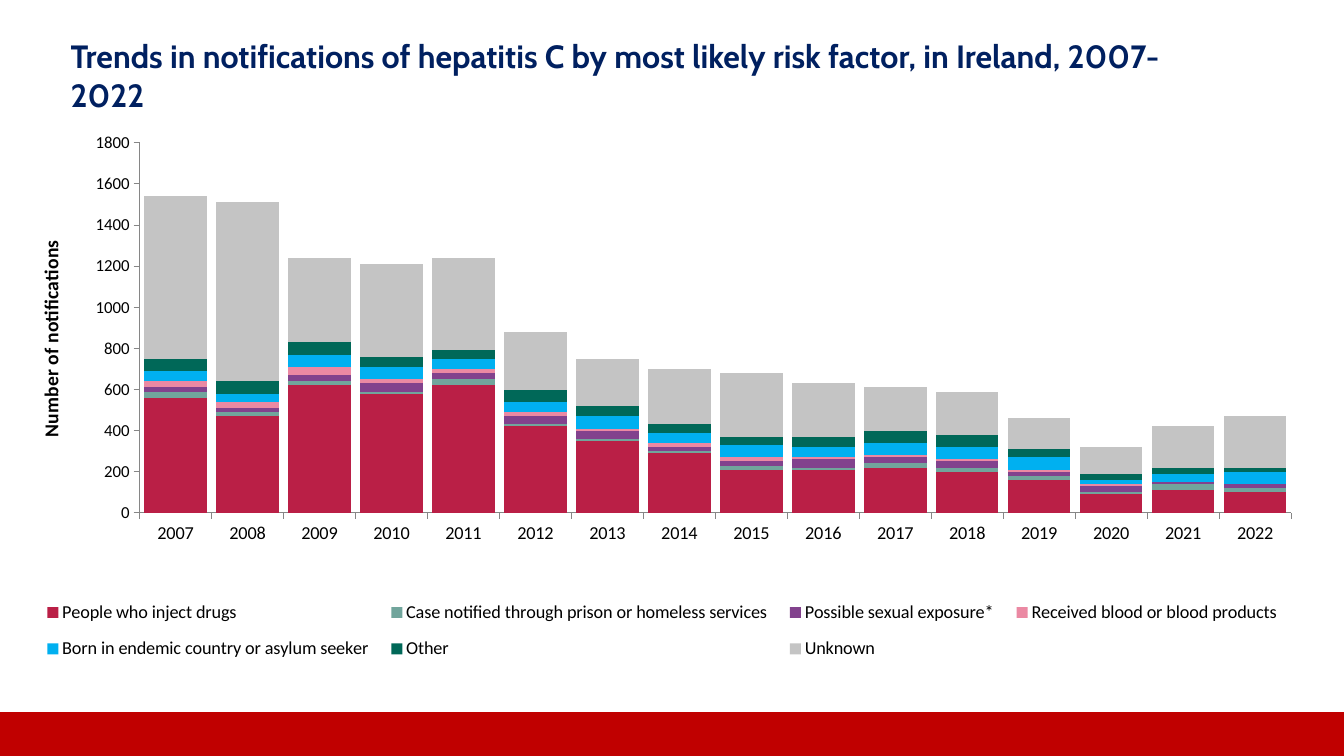
from typing import NamedTuple

from lxml import etree
from pptx import Presentation
from pptx.chart.chart import Chart
from pptx.chart.data import CategoryChartData
from pptx.dml.color import RGBColor
from pptx.enum.chart import XL_CHART_TYPE as ChartType
from pptx.enum.chart import XL_LEGEND_POSITION as LegendPos
from pptx.enum.chart import XL_TICK_MARK as Tick
from pptx.enum.shapes import MSO_SHAPE as Shape
from pptx.enum.text import MSO_ANCHOR as Anchor
from pptx.oxml.ns import qn
from pptx.util import Inches, Pt

RED = RGBColor(0xC0, 0x00, 0x00)
NAVY = RGBColor(0x00, 0x20, 0x60)
BLACK = RGBColor(0x00, 0x00, 0x00)
GREY = RGBColor(0x86, 0x86, 0x86)
YEARS = range(2007, 2023)


class RiskFactor(NamedTuple):
    name: str
    color: RGBColor
    counts: list[int]


class Area(NamedTuple):
    x: float
    y: float
    w: float
    h: float


RISK_FACTORS = [
    RiskFactor("People who inject drugs", RGBColor(0xBA, 0x1F, 0x46),
               [560, 470, 620, 580, 620, 420, 350, 290, 210, 210, 220, 200, 160, 90, 110, 100]),
    RiskFactor("Case notified through prison or homeless services", RGBColor(0x71, 0xA5, 0x9C),
               [30, 20, 20, 10, 30, 10, 10, 10, 20, 10, 20, 20, 20, 10, 30, 20]),
    RiskFactor("Possible sexual exposure*", RGBColor(0x82, 0x42, 0x8D),
               [20, 20, 30, 40, 30, 40, 40, 20, 20, 40, 30, 30, 20, 30, 10, 20]),
    RiskFactor("Received blood or blood products", RGBColor(0xEB, 0x89, 0xA3),
               [30, 30, 40, 20, 20, 20, 10, 20, 20, 10, 10, 10, 10, 10, 0, 0]),
    RiskFactor("Born in endemic country or asylum seeker", RGBColor(0x00, 0xB0, 0xF0),
               [50, 40, 60, 60, 50, 50, 60, 50, 60, 50, 60, 60, 60, 20, 40, 60]),
    RiskFactor("Other", RGBColor(0x00, 0x68, 0x58),
               [60, 60, 60, 50, 40, 60, 50, 40, 40, 50, 60, 60, 40, 30, 30, 20]),
    RiskFactor("Unknown", RGBColor(0xC4, 0xC4, 0xC4),
               [790, 870, 410, 450, 450, 280, 230, 270, 310, 260, 210, 210, 150, 130, 200, 250]),
]


def set_font(font, name: str, size: float, color: RGBColor, bold: bool = False) -> None:
    font.name = name
    font.size = Pt(size)
    font.bold = bold
    font.color.rgb = color


def set_layout(parent, index: int, area: Area, inner: bool = False) -> None:
    for old in parent.findall(qn("c:layout")):
        parent.remove(old)
    layout = etree.Element(qn("c:layout"))
    manual = etree.SubElement(layout, qn("c:manualLayout"))
    settings = [("layoutTarget", "inner")] if inner else []
    settings += [("xMode", "edge"), ("yMode", "edge"), *area._asdict().items()]
    for tag, value in settings:
        etree.SubElement(manual, qn(f"c:{tag}")).set("val", str(value))
    parent.insert(index, layout)


def style_axis(axis, size: float) -> None:
    axis.has_major_gridlines = False
    axis.major_tick_mark = Tick.OUTSIDE
    axis.minor_tick_mark = Tick.NONE
    axis.format.line.color.rgb = GREY
    axis.format.line.width = Pt(0.75)
    set_font(axis.tick_labels.font, "Calibri", size, BLACK)


def style_chart(chart: Chart) -> None:
    set_font(chart.font, "Calibri", 10, BLACK)
    chart.has_title = False
    style_axis(chart.category_axis, 13)
    value_axis = chart.value_axis
    style_axis(value_axis, 12)
    value_axis.minimum_scale = 0
    value_axis.maximum_scale = 1800
    value_axis.major_unit = 200
    p = value_axis.axis_title.text_frame.paragraphs[0]
    p.text = "Number of notifications"
    set_font(p.font, "Calibri", 14, BLACK, bold=True)

    plot = chart.plots[0]
    plot.gap_width = 15
    plot.overlap = 100
    plot.vary_by_categories = False
    for series, factor in zip(plot.series, RISK_FACTORS):
        series.format.fill.solid()
        series.format.fill.fore_color.rgb = factor.color

    chart.has_legend = True
    legend = chart.legend
    legend.position = LegendPos.BOTTOM
    legend.include_in_layout = False
    set_font(legend.font, "Calibri", 13, BLACK)

    plot_area, = chart.element.xpath("c:chart/c:plotArea") if hasattr(chart, "element") else chart._chartSpace.xpath("c:chart/c:plotArea")
    set_layout(plot_area, 0, Area(0.094, 0.03, 0.884, 0.658), inner=True)
    legend_xml = plot_area.getparent().find(qn("c:legend"))
    set_layout(legend_xml, 1, Area(0.01, 0.82, 0.97, 0.155))


def add_title(s) -> None:
    box = s.shapes.add_textbox(Inches(0.58), Inches(0.33), Inches(11.5), Inches(0.83))
    tf = box.text_frame
    tf.word_wrap = True
    tf.vertical_anchor = Anchor.MIDDLE
    tf.margin_left = tf.margin_right = Inches(0.12)
    tf.margin_top = tf.margin_bottom = Inches(0.06)
    p = tf.paragraphs[0]
    p.text = "Trends in notifications of hepatitis C by most likely risk factor, in Ireland, 2007-2022"
    set_font(p.font, "Cabin", 23, NAVY, bold=True)


def add_footer(s) -> None:
    sp = s.shapes.add_shape(Shape.RECTANGLE, 0, Inches(7.08), Inches(13.33), Inches(0.42))
    sp.shadow.inherit = False
    sp.fill.solid()
    sp.fill.fore_color.rgb = RED
    sp.line.color.rgb = RED
    sp.line.width = Pt(2)


def add_notifications_chart(s) -> None:
    data = CategoryChartData()
    data.categories = [str(year) for year in YEARS]
    for factor in RISK_FACTORS:
        data.add_series(factor.name, factor.counts)
    frame = s.shapes.add_chart(ChartType.COLUMN_STACKED, Inches(0.17), Inches(1.25),
                               Inches(12.92), Inches(5.58), data)
    style_chart(frame.chart)


def main() -> None:
    prs = Presentation()
    prs.slide_width = Inches(13.33)
    prs.slide_height = Inches(7.5)
    s = prs.slides.add_slide(prs.slide_layouts[6])
    add_footer(s)
    add_title(s)
    add_notifications_chart(s)
    prs.save("out.pptx")


if __name__ == "__main__":
    main()
